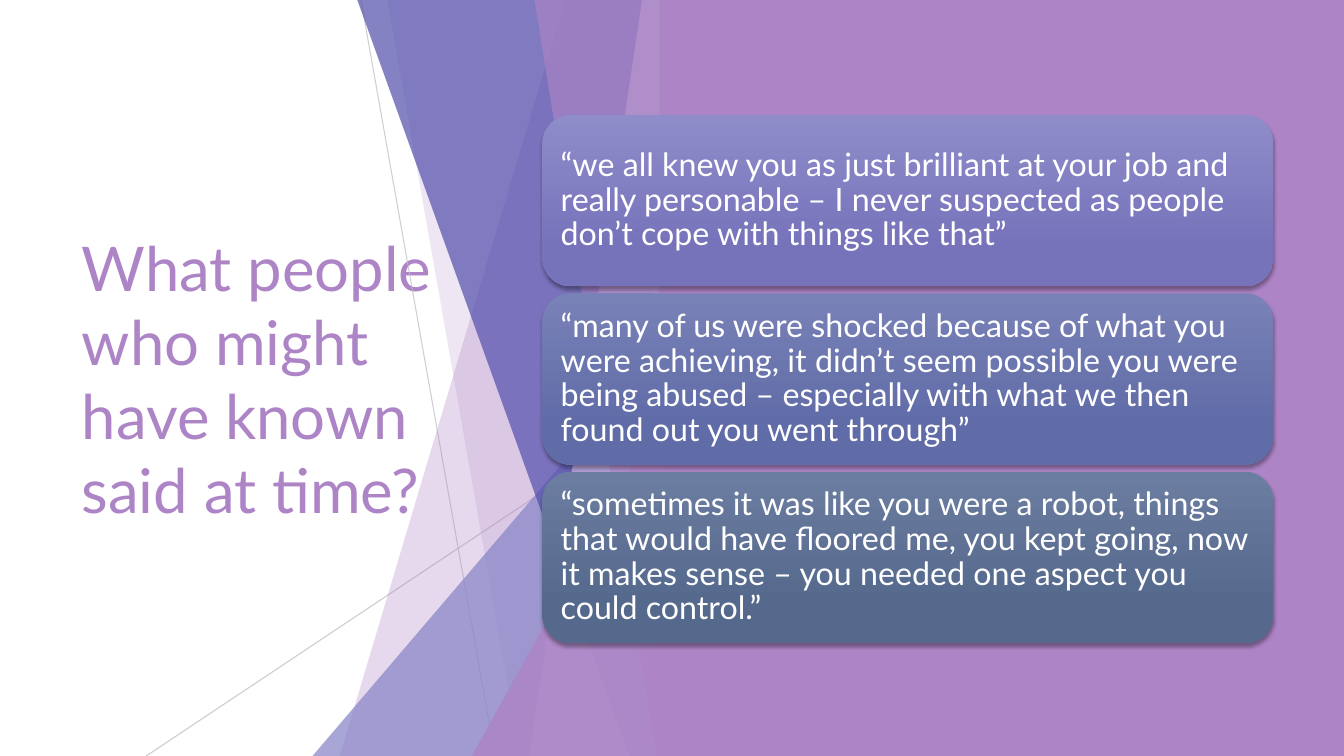
from dataclasses import dataclass

from lxml.etree import SubElement
from pptx import Presentation
from pptx.dml.color import RGBColor
from pptx.enum.shapes import MSO_CONNECTOR, MSO_SHAPE
from pptx.enum.text import MSO_ANCHOR, MSO_AUTO_SIZE, PP_ALIGN
from pptx.oxml.ns import qn
from pptx.util import Inches, Pt


@dataclass(frozen=True)
class Theme:
    font: str = "Lato"
    title_size: int = 44
    quote_size: int = 23
    lilac: str = "AD84C6"
    pale_lilac: str = "CEB5DD"
    periwinkle: str = "8784C7"
    indigo: str = "524EAB"
    light_grey: str = "D9D9D9"
    grey: str = "BFBFBF"
    white: str = "FFFFFF"


theme = Theme()


def paint(shape, color, opacity=100):
    """Give a shape a flat fill of the given opacity, without outline or shadow."""
    shape.shadow.inherit = False
    shape.line.fill.background()
    shape.fill.solid()
    shape.fill.fore_color.rgb = RGBColor.from_string(color)
    if opacity < 100:
        rgb = shape._element.spPr.find(qn("a:solidFill"))[0]
        SubElement(rgb, qn("a:alpha"), val=str(opacity * 1000))


def add_styled_run(paragraph, text, size, color):
    run = paragraph.add_run()
    run.text = text
    run.font.name = theme.font
    run.font.size = Pt(size)
    run.font.color.rgb = RGBColor.from_string(color)


presentation = Presentation()
presentation.slide_width = Inches(13.33)
presentation.slide_height = Inches(7.5)
slide = presentation.slides.add_slide(presentation.slide_layouts[5])
shapes = slide.shapes

# Title
title = shapes.title
title.left, title.top = Inches(0.71), Inches(1.51)
title.width, title.height = Inches(3.88), Inches(4.48)
title_frame = title.text_frame
title_frame.word_wrap = True
title_frame.auto_size = MSO_AUTO_SIZE.NONE
title_frame.vertical_anchor = MSO_ANCHOR.MIDDLE
title_paragraph = title_frame.paragraphs[0]
title_paragraph.alignment = PP_ALIGN.LEFT
add_styled_run(title_paragraph, "What people who might have known said at time?",
               theme.title_size, theme.lilac)

# Thin lines: start x, start y, end x, end y, color, opacity
for x1, y1, x2, y2, color, opacity in [
    (3.58, 0, 4.91, 7.5, theme.grey, 75),
    (6.66, 4.03, 1.45, 7.5, theme.light_grey, 80),
]:
    line = shapes.add_connector(MSO_CONNECTOR.STRAIGHT, Inches(x1), Inches(y1),
                                Inches(x2), Inches(y2))
    line.line.width = Pt(0.75)
    line.line.color.rgb = RGBColor.from_string(theme.grey)
    rgb = line._element.spPr.find(".//" + qn("a:srgbClr"))
    SubElement(rgb, qn("a:alpha"), val=str(opacity * 1000))
    SubElement(line._element.spPr, qn("a:effectLst"))

# Translucent facets, all ending at the same right edge
facet_right = 6.66
facet_bottom = 7.5
# Slanted facets give (top x, bottom x); triangles give (left, top)
for kind, first, second, color, opacity in [
    ("slant", 5.61, 3.37, theme.lilac, 30),
    ("slant", 3.84, 5.16, theme.lilac, 20),
    ("triangle", 3.1, 3.33, theme.periwinkle, 72),
    ("slant", 3.54, 6.24, theme.indigo, 70),
    ("slant", 6.37, 5.25, theme.pale_lilac, 70),
    ("slant", 5.3, 6.51, theme.lilac, 65),
    ("triangle", 4.68, 3.93, theme.lilac, 80),
]:
    if kind == "slant":
        corners = [(facet_right, -0.01), (facet_right, facet_bottom), (second, facet_bottom)]
        builder = shapes.build_freeform(Inches(first), Inches(-0.01))
        builder.add_line_segments([(Inches(x), Inches(y)) for x, y in corners])
        facet = builder.convert_to_shape()
    else:
        facet = shapes.add_shape(MSO_SHAPE.ISOSCELES_TRIANGLE, Inches(first), Inches(second),
                                 Inches(facet_right - first), Inches(facet_bottom - second))
        facet.adjustments[0] = 1
    paint(facet, color, opacity)

panel = shapes.add_shape(MSO_SHAPE.RECTANGLE, Inches(6.54), 0, Inches(6.8), Inches(7.5))
paint(panel, theme.lilac)

# Quote cards: text, gradient top, gradient bottom
quotes = [
    ("“we all knew you as just brilliant at your job and really personable – "
     "I never suspected as people don’t cope with things like that”", "8F8CCA", "7773BB"),
    ("“many of us were shocked because of what you were achieving, it didn’t seem possible "
     "you were being abused – especially with what we then found out you went through”",
     "7982B7", "606CA8"),
    ("“sometimes it was like you were a robot, things that would have floored me, you kept "
     "going, now it makes sense – you needed one aspect you could control.”",
     "6B7DA0", "55698D"),
]
for index, (quote, top_color, bottom_color) in enumerate(quotes):
    card = shapes.add_shape(MSO_SHAPE.ROUNDED_RECTANGLE, Inches(5.38),
                            Inches(1.14 + 1.77 * index), Inches(7.25), Inches(1.7))
    paint(card, top_color)
    card.fill.gradient()
    card.fill.gradient_angle = 270
    stops = card.fill.gradient_stops
    for stop, color, position in zip(stops, (top_color, bottom_color), (0, 0.78)):
        stop.color.rgb = RGBColor.from_string(color)
        stop.position = position

    effects = card._element.spPr.find(qn("a:effectLst"))
    shadow = SubElement(effects, qn("a:outerShdw"), blurRad=str(Pt(3)), dist=str(Pt(2)),
                        dir="5400000", rotWithShape="0")
    shadow_color = SubElement(shadow, qn("a:srgbClr"), val="000000")
    SubElement(shadow_color, qn("a:alpha"), val="35000")

    frame = card.text_frame
    frame.word_wrap = True
    frame.vertical_anchor = MSO_ANCHOR.MIDDLE
    frame.margin_left = frame.margin_right = Inches(0.1)
    frame.margin_top = frame.margin_bottom = Inches(0.1)
    paragraph = frame.paragraphs[0]
    paragraph.alignment = PP_ALIGN.LEFT
    paragraph.line_spacing = 0.9
    add_styled_run(paragraph, quote, theme.quote_size, theme.white)

presentation.save("out.pptx")
